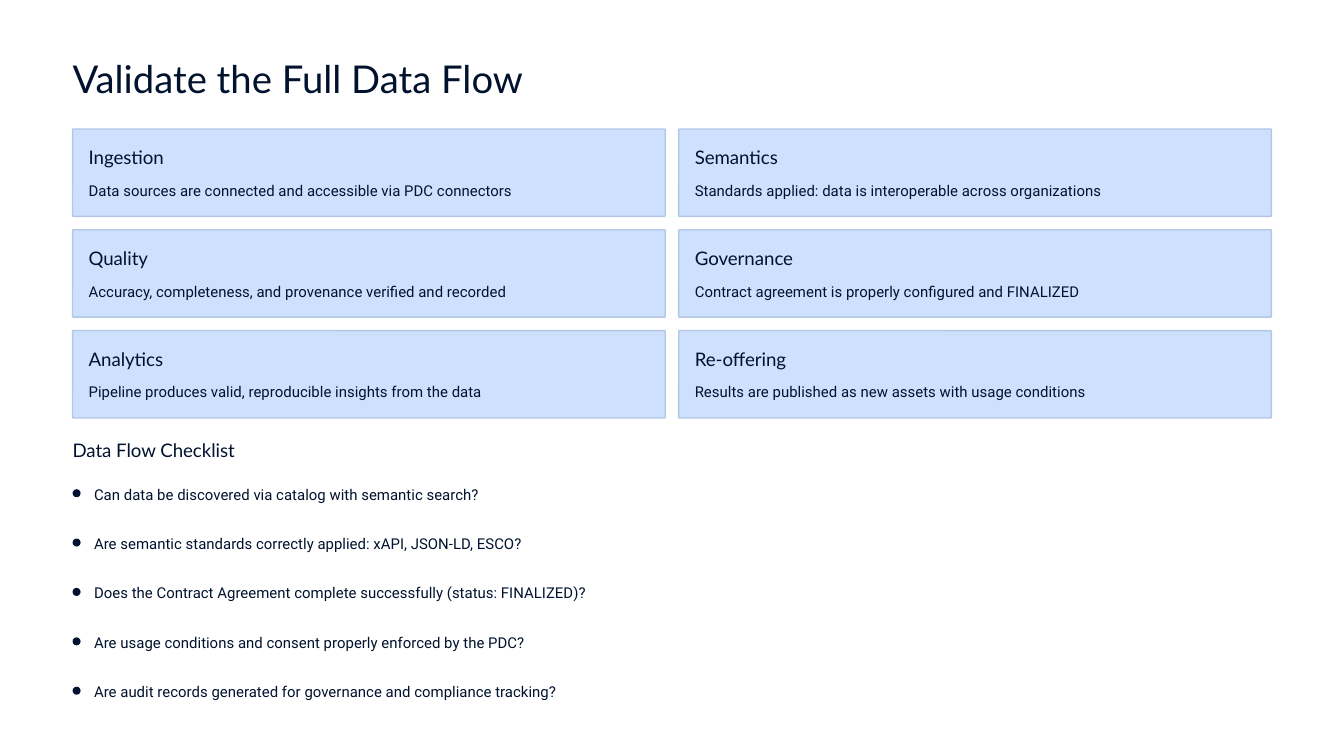
from dataclasses import dataclass

from pptx import Presentation
from pptx.dml.color import RGBColor
from pptx.enum.shapes import MSO_SHAPE as Preset
from pptx.enum.text import MSO_ANCHOR as Anchor, MSO_AUTO_SIZE as AutoSize, PP_ALIGN as Align
from pptx.util import Inches, Pt


@dataclass(frozen=True)
class Theme:
    paper: str = "FFFFFF"
    ink: str = "01122E"
    card: str = "CDE0FE"
    card_edge: str = "B3C6E4"
    heading_font: str = "Lato"
    body_font: str = "Roboto"
    title_size: float = 20.5
    heading_size: float = 10
    body_size: float = 8
    heading_spacing: float = 1.04
    body_spacing: float = 1.23


def write(frame, text, *, font, size, color, spacing):
    """Fill a frame with one left-aligned paragraph, without insets."""
    frame.margin_left = frame.margin_right = 0
    frame.margin_top = frame.margin_bottom = 0
    frame.word_wrap = True
    frame.auto_size = AutoSize.NONE
    frame.vertical_anchor = Anchor.TOP
    frame.text = text
    paragraph = frame.paragraphs[0]
    paragraph.alignment = Align.LEFT
    paragraph.line_spacing = spacing
    paragraph.space_before = Pt(0)
    run_font = paragraph.runs[0].font
    run_font.name = font
    run_font.size = Pt(size)
    run_font.color.rgb = RGBColor.from_string(color)


class SlideBuilder:
    def __init__(self, slide, theme):
        self.slide = slide
        self.theme = theme
        backdrop = slide.background.fill
        backdrop.solid()
        backdrop.fore_color.rgb = RGBColor.from_string(theme.paper)

    def title(self, text, left, top, width, height):
        holder = self.slide.shapes.title
        holder.left, holder.top = Inches(left), Inches(top)
        holder.width, holder.height = Inches(width), Inches(height)
        self.write_heading(holder.text_frame, text, self.theme.title_size)

    def write_heading(self, frame, text, size):
        theme = self.theme
        write(frame, text, font=theme.heading_font, size=size,
              color=theme.ink, spacing=theme.heading_spacing)

    def text_box(self, left, top, width, height):
        return self.slide.shapes.add_textbox(
            Inches(left), Inches(top), Inches(width), Inches(height)).text_frame

    def heading(self, text, left, top, width):
        self.write_heading(self.text_box(left, top, width, 0.18), text, self.theme.heading_size)

    def body(self, text, left, top, width):
        theme = self.theme
        write(self.text_box(left, top, width, 0.17), text, font=theme.body_font,
              size=theme.body_size, color=theme.ink, spacing=theme.body_spacing)

    def rounded(self, left, top, width, height, *, fill, radius, edge=None):
        shape = self.slide.shapes.add_shape(
            Preset.ROUNDED_RECTANGLE, Inches(left), Inches(top), Inches(width), Inches(height))
        shape.shadow.inherit = False
        shape.adjustments[0] = radius
        shape.fill.solid()
        shape.fill.fore_color.rgb = RGBColor.from_string(fill)
        if edge:
            shape.line.color.rgb = RGBColor.from_string(edge)
            shape.line.width = Pt(0.75)
        else:
            shape.line.fill.background()

    def card(self, name, detail, left, top, width, height):
        pad = 0.12
        self.rounded(left, top, width, height, fill=self.theme.card,
                     radius=0.01, edge=self.theme.card_edge)
        self.heading(name, left + pad, top + pad, 1.44)
        self.body(detail, left + pad, top + 0.36, width - 2 * pad)

    def check_item(self, question, left, top, width):
        dot, indent = 0.06, 0.16
        self.rounded(left, top + 0.06, dot, dot, fill=self.theme.ink, radius=0.5)
        self.body(question, left + indent, top, width - indent)


STAGES = [
    ("Ingestion", "Data sources are connected and accessible via PDC connectors"),
    ("Semantics", "Standards applied: data is interoperable across organizations"),
    ("Quality", "Accuracy, completeness, and provenance verified and recorded"),
    ("Governance", "Contract agreement is properly configured and FINALIZED"),
    ("Analytics", "Pipeline produces valid, reproducible insights from the data"),
    ("Re-offering", "Results are published as new assets with usage conditions"),
]
CHECKLIST = [
    "Can data be discovered via catalog with semantic search?",
    "Are semantic standards correctly applied: xAPI, JSON-LD, ESCO?",
    "Does the Contract Agreement complete successfully (status: FINALIZED)?",
    "Are usage conditions and consent properly enforced by the PDC?",
    "Are audit records generated for governance and compliance tracking?",
]
SLIDE_WIDTH = 10
SLIDE_HEIGHT = SLIDE_WIDTH * 9 / 16
MARGIN = 0.54
CONTENT_WIDTH = SLIDE_WIDTH - 2 * MARGIN
CARD_TOP, CARD_HEIGHT, GAP = 0.96, 0.65, 0.1
CARD_WIDTH = (CONTENT_WIDTH - GAP) / 2
CHECK_TOP, CHECK_LAST = 3.58, 5.05


def main():
    deck = Presentation()
    deck.slide_width, deck.slide_height = Inches(SLIDE_WIDTH), Inches(SLIDE_HEIGHT)
    title_only = deck.slide_layouts[5]
    builder = SlideBuilder(deck.slides.add_slide(title_only), Theme())

    builder.title("Validate the Full Data Flow", MARGIN, 0.4, 4.09, 0.36)
    for index, (name, detail) in enumerate(STAGES):
        row, column = divmod(index, 2)
        builder.card(name, detail,
                     MARGIN + column * (CARD_WIDTH + GAP),
                     CARD_TOP + row * (CARD_HEIGHT + GAP),
                     CARD_WIDTH, CARD_HEIGHT)

    builder.heading("Data Flow Checklist", MARGIN, 3.26, 1.94)
    pitch = (CHECK_LAST - CHECK_TOP) / (len(CHECKLIST) - 1)
    for index, question in enumerate(CHECKLIST):
        builder.check_item(question, MARGIN, CHECK_TOP + index * pitch, CONTENT_WIDTH)

    deck.save("out.pptx")


if __name__ == "__main__":
    main()
